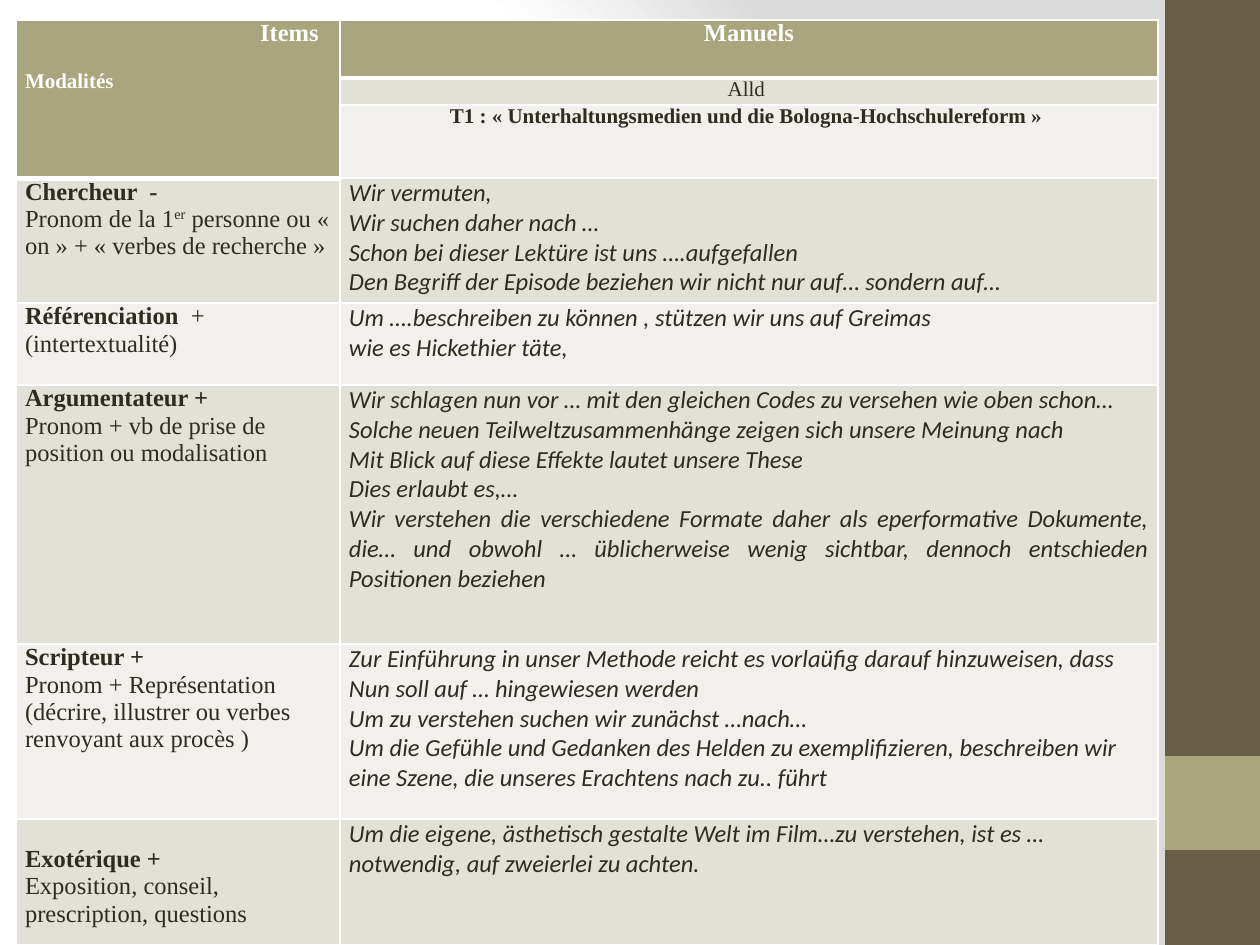
from lxml.etree import SubElement
from pptx import Presentation
from pptx.dml.color import RGBColor
from pptx.enum.shapes import MSO_SHAPE
from pptx.enum.text import PP_ALIGN as Align
from pptx.oxml import parse_xml
from pptx.oxml.ns import nsdecls, qn
from pptx.util import Pt

WHITE = RGBColor(0xFF, 0xFF, 0xFF)
INK = RGBColor(0x2F, 0x2B, 0x20)
BROWN = RGBColor(0x67, 0x5E, 0x47)
OLIVE = RGBColor(0xA9, 0xA5, 0x7C)
BAND_DARK = RGBColor(0xE2, 0xE1, 0xD7)
BAND_LIGHT = RGBColor(0xF1, 0xF0, 0xEC)
SERIF, SANS = "Times New Roman", "Calibri"
HANGING = 38

BACKGROUND = f"""<p:bg {nsdecls("p", "a")}><p:bgPr><a:gradFill rotWithShape="1"><a:gsLst>
<a:gs pos="0"><a:srgbClr val="FFFFFF"/></a:gs>
<a:gs pos="75000"><a:srgbClr val="FFFFFF"/></a:gs>
<a:gs pos="100000"><a:srgbClr val="DADADA"/></a:gs></a:gsLst>
<a:path path="circle"><a:fillToRect l="20000" t="50000" r="100000" b="50000"/></a:path>
</a:gradFill><a:effectLst/></p:bgPr></p:bg>"""


def px(length):
    return round(length * 914400 / 126)


def bold(text, **style):
    return text, {"bold": True, **style}


def plain(text, **style):
    return text, style


def italic(text):
    return text, {"italic": True, "font": SANS}


class Page:
    def __init__(self, deck):
        self.slide = deck.slides.add_slide(deck.slide_layouts[6])
        self.slide.element.cSld.insert(0, parse_xml(BACKGROUND))

    def box(self, left, top, width, height, color):
        shape = self.slide.shapes.add_shape(
            MSO_SHAPE.RECTANGLE, px(left), px(top), px(width), px(height))
        shape.shadow.inherit = False
        shape.fill.solid()
        shape.fill.fore_color.rgb = color
        shape.line.fill.background()

    def table(self, left, top, widths, heights):
        frame = self.slide.shapes.add_table(
            len(heights), len(widths), px(left), px(top),
            px(sum(widths)), px(sum(heights)))
        table = frame.table
        table.first_row = table.horz_banding = False
        for column, width in zip(table.columns, widths):
            column.width = px(width)
        for row, height in zip(table.rows, heights):
            row.height = px(height)
        return table

    def cell(self, cell, color, bottom=1):
        """Set margins, white borders and fill; bottom is the lower border in points."""
        cell.margin_left = cell.margin_right = px(9)
        cell.margin_top = cell.margin_bottom = 0
        props = cell._tc.get_or_add_tcPr()
        for side, width in (("L", 1), ("R", 1), ("T", 1), ("B", bottom)):
            line = SubElement(props, qn(f"a:ln{side}"), w=str(Pt(width)))
            SubElement(SubElement(line, qn("a:solidFill")), qn("a:srgbClr"), val=str(WHITE))
        cell.fill.solid()
        cell.fill.fore_color.rgb = color

    def text(self, cell, paras, align=Align.LEFT, size=14, color=INK):
        """Write one paragraph for each list of (text, style) spans."""
        frame = cell.text_frame
        for index, spans in enumerate(paras):
            para = frame.paragraphs[0] if index == 0 else frame.add_paragraph()
            para.alignment = align
            for text, style in spans:
                span = para.add_run()
                span.text = text
                font = span.font
                font.name = style.get("font", SERIF)
                font.size = Pt(style.get("size", size))
                font.bold = style.get("bold", False)
                font.italic = style.get("italic", False)
                font.color.rgb = color
                if "raised" in style:
                    span._r.get_or_add_rPr().set("baseline", str(style["raised"] * 1000))


ROWS = [
    ([[bold("Chercheur  -")],
      [plain("Pronom de la 1"), plain("er", raised=30),
       plain(" personne ou « on » + « verbes de recherche »")]],
     ["Wir vermuten,",
      "Wir suchen daher nach …",
      "Schon bei dieser Lektüre ist uns ….aufgefallen",
      "Den Begriff der Episode beziehen wir nicht nur auf… sondern auf…"]),
    ([[bold("Référenciation "), plain(" +(intertextualité)")]],
     ["Um ….beschreiben zu können , stützen wir uns auf Greimas",
      "wie es Hickethier täte,"]),
    ([[bold("Argumentateur +")],
      [plain("Pronom + vb de prise de position ou modalisation")]],
     ["Wir schlagen nun vor … mit den gleichen Codes zu versehen wie oben schon…",
      "Solche neuen Teilweltzusammenhänge zeigen sich unsere Meinung nach",
      "Mit Blick auf diese Effekte lautet unsere These",
      "Dies erlaubt es,…",
      "Wir verstehen die verschiedene Formate daher als eperformative Dokumente, "
      "die… und obwohl … üblicherweise wenig sichtbar, dennoch entschieden "
      "Positionen beziehen"]),
    ([[bold("Scripteur +")],
      [plain("Pronom + Représentation")],
      [plain("(décrire, illustrer ou verbes renvoyant aux procès )")]],
     ["Zur Einführung in unser Methode reicht es vorlaüfig darauf hinzuweisen, dass",
      "Nun soll auf … hingewiesen werden",
      "Um zu verstehen suchen wir zunächst …nach…",
      "Um die Gefühle und Gedanken des Helden zu exemplifizieren, beschreiben wir "
      "eine Szene, die unseres Erachtens nach zu.. führt"]),
    ([[bold("Exotérique +")],
      [plain("Exposition, conseil, prescription, questions")]],
     ["Um die eigene, ästhetisch gestalte Welt im Film…zu verstehen, ist es … "
      "notwendig, auf zweierlei zu achten."]),
]


def fill_header(page, table):
    corner, manuals = table.cell(0, 0), table.cell(0, 1)
    corner.merge(table.cell(2, 0))
    for row in range(3):
        page.cell(table.cell(row, 0), OLIVE, bottom=3)
    page.cell(manuals, OLIVE, bottom=3)
    page.text(corner, [[bold(" Items  ")], [bold("Modalités", size=12)]], color=WHITE)
    items, modalities = corner.text_frame.paragraphs
    items.alignment = Align.RIGHT
    modalities.space_before = Pt(13)
    page.text(manuals, [[bold("Manuels")]], Align.CENTER, color=WHITE)
    for para in (items, modalities, manuals.text_frame.paragraphs[0]):
        props = para._p.get_or_add_pPr()
        props.set("marL", str(px(HANGING)))
        props.set("indent", str(-px(HANGING)))

    titles = [
        (plain("Alld "), BAND_DARK),
        (bold("T1 : « Unterhaltungsmedien und die Bologna-Hochschulereform » "), BAND_LIGHT),
    ]
    for row, (title, color) in enumerate(titles, start=1):
        page.cell(table.cell(row, 1), color)
        page.text(table.cell(row, 1), [[title]], Align.CENTER, size=12)


def fill_body(page, table):
    for index, (label, examples) in enumerate(ROWS):
        color = BAND_LIGHT if index % 2 else BAND_DARK
        left, right = table.cell(index + 3, 0), table.cell(index + 3, 1)
        page.cell(left, color)
        page.cell(right, color)
        page.text(left, label)
        page.text(right, [[italic(example)] for example in examples])
    left.margin_top = px(27)
    table.cell(5, 1).text_frame.paragraphs[-1].alignment = Align.JUSTIFY


def main():
    deck = Presentation()
    deck.slide_width, deck.slide_height = px(1260), px(945)
    page = Page(deck)
    page.box(1165, 0, 95, 945, BROWN)
    page.box(1165, 756, 95, 94, OLIVE)
    table = page.table(16, 20, [324, 818], [58, 27, 73, 125, 82, 259, 175, 126])
    fill_header(page, table)
    fill_body(page, table)
    deck.save("out.pptx")


if __name__ == "__main__":
    main()
